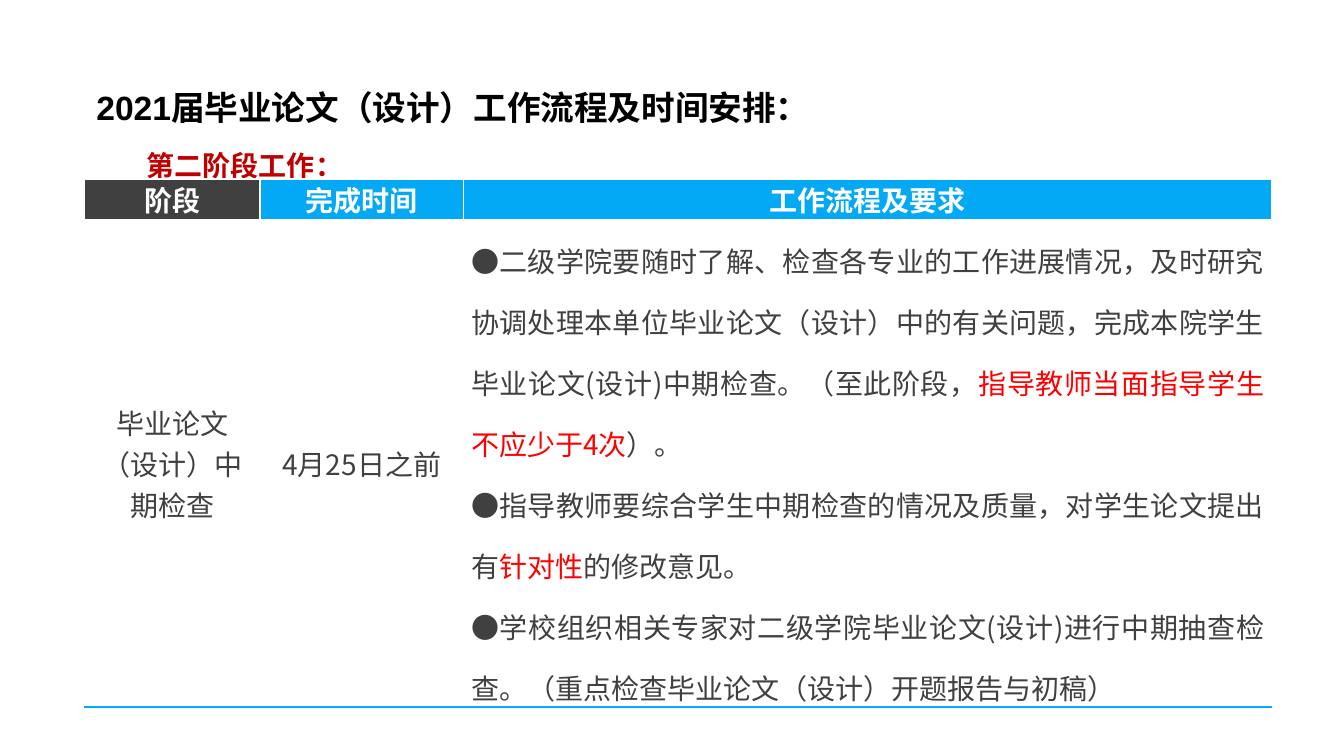
import pptx
import pptx.dml.color
import pptx.enum.text
import pptx.oxml
import pptx.oxml.ns
import pptx.util
from pptx.dml.color import RGBColor
from pptx.util import Cm, Pt

BLACK = RGBColor(0x00, 0x00, 0x00)
WHITE = RGBColor(0xFF, 0xFF, 0xFF)
CRIMSON = RGBColor(0xC0, 0x00, 0x00)
RED = RGBColor(0xFF, 0x00, 0x00)
CHARCOAL = RGBColor(0x40, 0x40, 0x40)
BLUE = RGBColor(0x03, 0xA9, 0xF5)

HEADING_FONT = "Arial"
TABLE_FONT = "Noto Sans CJK SC"

HEADINGS = [
    ("2021届毕业论文（设计）工作流程及时间安排：", 24, BLACK, 0),
    ("第二阶段工作：", 20, CRIMSON, 1.27),
]
COLUMNS = [
    ("阶段", 4.42, CHARCOAL),
    ("完成时间", 5.13, BLUE),
    ("工作流程及要求", 20.37, BLUE),
]
STAGE = "毕业论文（设计）中期检查"
DEADLINE = "4月25日之前"
REQUIREMENTS = [
    [
        ("●二级学院要随时了解、检查各专业的工作进展情况，及时研究协调处理本单位毕业论文（设计）中的有关问题，"
         "完成本院学生毕业论文(设计)中期检查。（至此阶段，", False),
        ("指导教师当面指导学生不应少于4次", True),
        ("）。", False),
    ],
    [
        ("●指导教师要综合学生中期检查的情况及质量，对学生论文提出有", False),
        ("针对性", True),
        ("的修改意见。", False),
    ],
    [
        ("●学校组织相关专家对二级学院毕业论文(设计)进行中期抽查检查。"
         "（重点检查毕业论文（设计）开题报告与初稿）", False),
    ],
]
ROW_HEIGHTS = [1.02, 12.29]
ALIGN = pptx.enum.text.PP_ALIGN
ANCHOR = pptx.enum.text.MSO_ANCHOR


def add_east_asian(font, name):
    east_asian = pptx.oxml.parse_xml(
        f'<a:ea {pptx.oxml.ns.nsdecls("a")} typeface="{name}"/>')
    font._element.append(east_asian)


def write(paragraph, pieces, name, size, color, bold, align):
    paragraph.alignment = align
    font = paragraph.font
    font.name, font.size, font.bold = name, Pt(size), bold
    font.color.rgb = color
    add_east_asian(font, name)
    for text, highlighted in pieces:
        run = paragraph.add_run()
        run.text = text
        if highlighted:
            run.font.color.rgb = RED


def add_border(cell, side, color):
    cell._tc.get_or_add_tcPr().append(pptx.oxml.parse_xml(
        f'<a:ln{side} {pptx.oxml.ns.nsdecls("a")} w="{Pt(1.5)}">'
        f'<a:solidFill><a:srgbClr val="{color}"/></a:solidFill></a:ln{side}>'))


def style_cell(cell, fill, column, anchor, bottom=None):
    cell.margin_left = cell.margin_right = Cm(0.19)
    cell.margin_top = cell.margin_bottom = 0
    cell.vertical_anchor = anchor
    if column > 0:
        add_border(cell, "L", WHITE)
    if column < len(COLUMNS) - 1:
        add_border(cell, "R", WHITE)
    if bottom is not None:
        add_border(cell, "B", bottom)
    cell.fill.solid()
    cell.fill.fore_color.rgb = fill


def add_headings(slide):
    frame = slide.shapes.add_textbox(Cm(2.18), Cm(1.75), Cm(29.36), Cm(2.7)).text_frame
    frame.word_wrap = True
    for index, (text, size, color, indent) in enumerate(HEADINGS):
        paragraph = frame.add_paragraph() if index else frame.paragraphs[0]
        paragraph.line_spacing = 1.3
        paragraph.space_after = Pt(8)
        paragraph._p.get_or_add_pPr().set("indent", str(Cm(indent)))
        write(paragraph, [(text, False)], HEADING_FONT, size, color, True, ALIGN.LEFT)


def add_schedule(slide):
    width = sum(column[1] for column in COLUMNS)
    schedule = slide.shapes.add_table(
        len(ROW_HEIGHTS), len(COLUMNS), Cm(2.13), Cm(4.51),
        Cm(width), Cm(sum(ROW_HEIGHTS))).table
    schedule.first_row = schedule.horz_banding = False
    for row, height in zip(schedule.rows, ROW_HEIGHTS):
        row.height = Cm(height)

    details = [[[(STAGE, False)]], [[(DEADLINE, False)]], REQUIREMENTS]
    for column, (title, column_width, fill) in enumerate(COLUMNS):
        schedule.columns[column].width = Cm(column_width)
        header = schedule.cell(0, column)
        style_cell(header, fill, column, ANCHOR.TOP)
        write(header.text_frame.paragraphs[0], [(title, False)],
              TABLE_FONT, 20, WHITE, True, ALIGN.CENTER)

        is_requirements = details[column] is REQUIREMENTS
        body = schedule.cell(1, column)
        style_cell(body, WHITE, column,
                   ANCHOR.TOP if is_requirements else ANCHOR.MIDDLE, BLUE)
        for index, pieces in enumerate(details[column]):
            frame = body.text_frame
            paragraph = frame.add_paragraph() if index else frame.paragraphs[0]
            if is_requirements:
                paragraph.line_spacing = 1.5
            write(paragraph, pieces, TABLE_FONT, 20, CHARCOAL, False,
                  ALIGN.JUSTIFY if is_requirements else ALIGN.CENTER)


def main():
    presentation = pptx.Presentation()
    presentation.slide_width = Cm(33.87)
    presentation.slide_height = Cm(19.05)
    slide = presentation.slides.add_slide(presentation.slide_layouts[6])
    add_headings(slide)
    add_schedule(slide)
    presentation.save("out.pptx")


if __name__ == "__main__":
    main()
